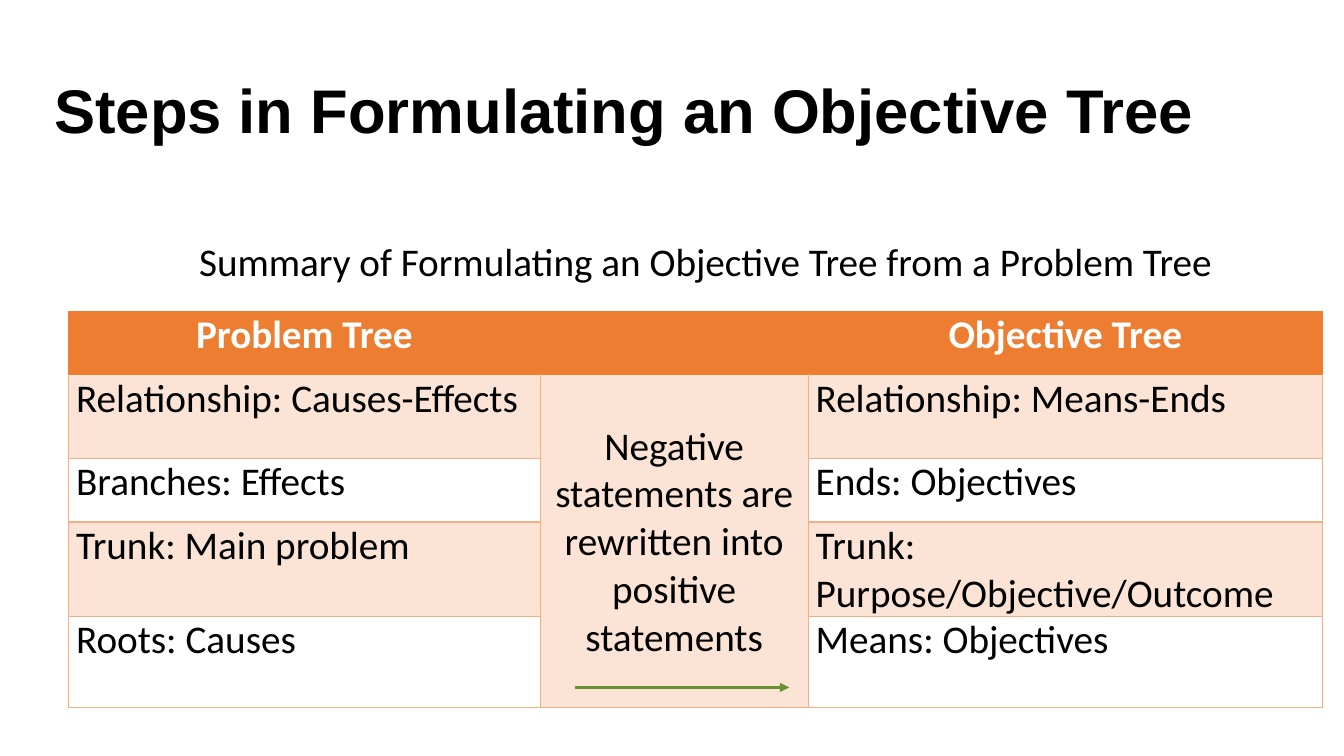
from dataclasses import dataclass

from lxml import etree
from pptx import Presentation
from pptx.dml.color import RGBColor
from pptx.enum.shapes import MSO_CONNECTOR
from pptx.enum.text import MSO_ANCHOR, PP_ALIGN
from pptx.oxml.ns import qn
from pptx.util import Pt

LEFT, MID, JUST = PP_ALIGN.LEFT, PP_ALIGN.CENTER, PP_ALIGN.JUSTIFY
TOP, CENTRE = MSO_ANCHOR.TOP, MSO_ANCHOR.MIDDLE
LINE = MSO_CONNECTOR.STRAIGHT


@dataclass(frozen=True)
class Theme:
    ink: str = "000000"
    paper: str = "FFFFFF"
    head: str = "ED7D31"
    band: str = "FBE4D5"
    rule: str = "F4B083"
    arrow: str = "699331"
    head_font: str = "Arial"
    body_font: str = "Calibri"
    title: int = 44
    body: int = 28


THEME = Theme()
COLS = (336.8, 191.5, 367.2)
ROWS = (45.3, 59.8, 45.3, 59.8, 65.5)
NOTE = "Negative statements are rewritten into positive statements"
CELLS = (
    ("Problem Tree", "", "Objective Tree"),
    ("Relationship: Causes-Effects", NOTE, "Relationship: Means-Ends"),
    ("Branches: Effects", "", "Ends: Objectives"),
    ("Trunk: Main problem", "", "Trunk: Purpose/Objective/Outcome"),
    ("Roots: Causes", "", "Means: Objectives"),
)


def style(para, font, size, color, bold=False, align=LEFT):
    para.alignment = align
    para.font.name = font
    para.font.size = Pt(size)
    para.font.bold = bold
    para.font.color.rgb = RGBColor.from_string(color)


def add_text(slide, box, text, anchor):
    frame = slide.shapes.add_textbox(*map(Pt, box)).text_frame
    frame.word_wrap = True
    frame.vertical_anchor = anchor
    frame.text = text
    return frame


def add_title(slide, box):
    frame = add_text(slide, box, "Steps in Formulating an Objective Tree", CENTRE)
    para = frame.paragraphs[0]
    para.line_spacing = 0.9
    style(para, THEME.head_font, THEME.title, THEME.ink, True)


def add_lead(slide, box):
    text = "Summary of Formulating an Objective Tree from a Problem Tree"
    frame = add_text(slide, box, text, TOP)
    frame.margin_left = Pt(32.4)
    para = frame.paragraphs[0]
    para.line_spacing = 1.1
    para.space_before, para.space_after = Pt(10), Pt(6)
    style(para, THEME.body_font, THEME.body, THEME.ink, align=MID)


def set_edges(cell, color, top):
    # Cell borders come before the fill in the cell properties
    props = cell._tc.get_or_add_tcPr()
    for spot, side in enumerate("LRTB"):
        edge = etree.Element(qn(f"a:ln{side}"), w=str(Pt(1)))
        fill = etree.SubElement(edge, qn("a:solidFill"))
        shade = top if side == "T" else color
        etree.SubElement(fill, qn("a:srgbClr"), val=shade)
        props.insert(spot, edge)


def fill_cell(cell, text, row, col):
    head = row == 0
    note = row > 0 and col == 1
    if head or note or row % 2:
        cell.fill.solid()
        color = THEME.head if head else THEME.band
        cell.fill.fore_color.rgb = RGBColor.from_string(color)
    else:
        cell.fill.background()
    set_edges(cell, THEME.head if head else THEME.rule,
              THEME.head if row < 2 else THEME.rule)
    cell.margin_left = cell.margin_right = Pt(5.4)
    # The note starts one line below the header
    cell.margin_top = Pt(34.2 if note else 0)
    cell.margin_bottom = 0
    cell.text = text
    para = cell.text_frame.paragraphs[0]
    para.space_before = para.space_after = Pt(3)
    style(para, THEME.body_font, THEME.body, THEME.paper if head else THEME.ink,
          head, MID if head or note else JUST)


def add_grid(slide, box):
    left, top = box
    size = (left, top, sum(COLS), sum(ROWS))
    frame = slide.shapes.add_table(len(ROWS), len(COLS), *map(Pt, size))
    table = frame.table
    table.first_row = table.horz_banding = False
    for col, width in zip(table.columns, COLS):
        col.width = Pt(width)
    for row, height in zip(table.rows, ROWS):
        row.height = Pt(height)
    table.cell(1, 1).merge(table.cell(len(ROWS) - 1, 1))
    for row, texts in enumerate(CELLS):
        for col, text in enumerate(texts):
            fill_cell(table.cell(row, col), text, row, col)

    # Arrow at the foot of the middle column
    start, level = left + COLS[0] + 24.6, top + 268.5
    ends = (start, level, start + 153.4, level)
    arrow = slide.shapes.add_connector(LINE, *map(Pt, ends))
    arrow.line.width = Pt(2.25)
    arrow.line.color.rgb = RGBColor.from_string(THEME.arrow)
    etree.SubElement(arrow.line._get_or_add_ln(), qn("a:tailEnd"), type="triangle")
    etree.SubElement(arrow._element.spPr, qn("a:effectLst"))


def main():
    deck = Presentation()
    deck.slide_width, deck.slide_height = Pt(960), Pt(540)
    slide = deck.slides.add_slide(deck.slide_layouts[6])
    add_title(slide, (31.7, 28.8, 862.6, 104.4))
    add_lead(slide, (49, 162.7, 884.2, 49.7))
    add_grid(slide, (49, 222.5))
    deck.save("out.pptx")


if __name__ == "__main__":
    main()
